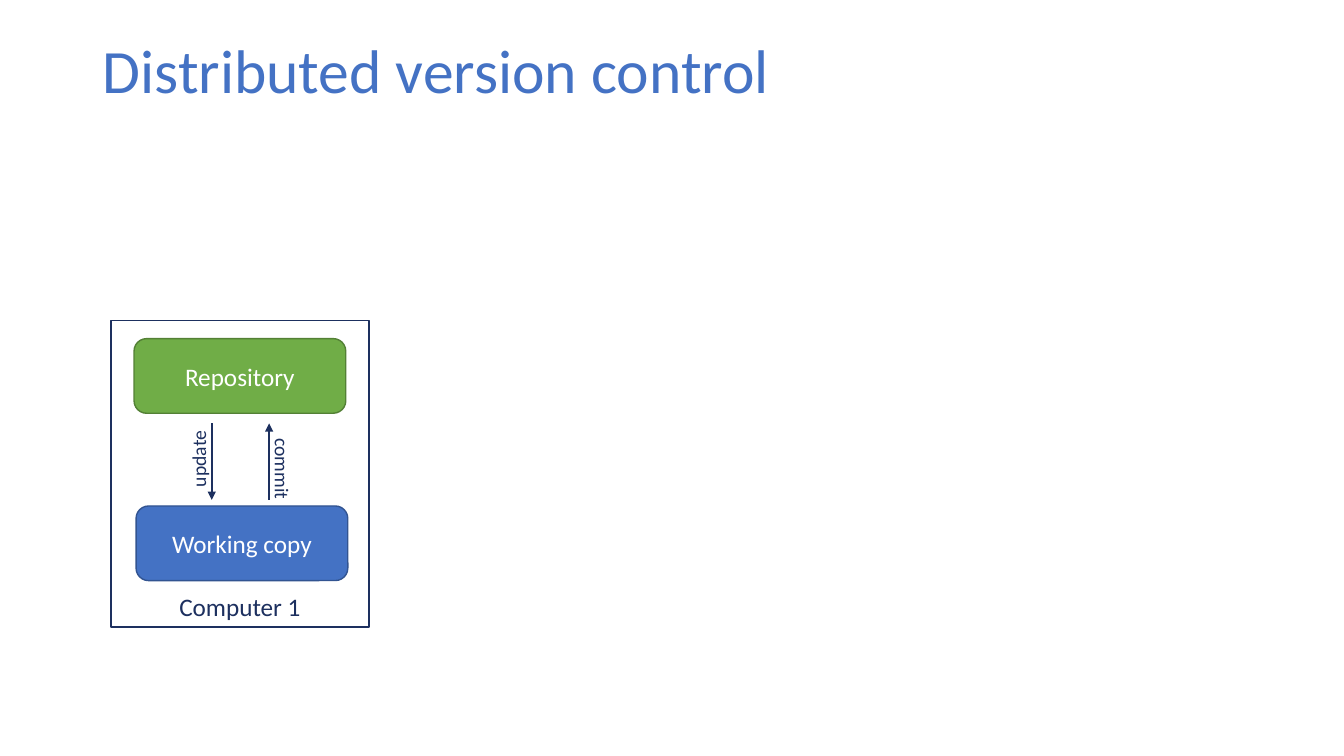
from dataclasses import dataclass

from lxml.etree import SubElement
from pptx import Presentation
from pptx.dml.color import RGBColor
from pptx.enum.shapes import MSO_CONNECTOR, MSO_SHAPE
from pptx.enum.text import MSO_ANCHOR, PP_ALIGN
from pptx.oxml.ns import qn
from pptx.util import Inches, Pt


@dataclass(frozen=True)
class Theme:
    font: str = "Calibri"
    blue: str = "4472C4"
    blue_edge: str = "325491"
    green: str = "70AD47"
    green_edge: str = "538035"
    navy: str = "1D305F"
    white: str = "FFFFFF"
    title_size: int = 44
    body_size: int = 18
    arrow_size: int = 14


THEME = Theme()
SLIDE_SIZE = 13.33, 7.5

TITLE = "Distributed version control"
COMPUTER = "Computer 1"
# name, left and top inside the computer, fill, edge
STORES = [
    ("Working copy", 0.25, 1.84, THEME.blue, THEME.blue_edge),
    ("Repository", 0.23, 0.18, THEME.green, THEME.green_edge),
]
# label, arrow x, points down, label left and top, rotation
TRANSFERS = [
    ("update", 1.0, True, 0.42, 1.13, 270),
    ("commit", 1.57, False, 1.25, 1.35, 90),
]

FRAME_LEFT, FRAME_TOP, FRAME_WIDTH, FRAME_HEIGHT = 1.1, 3.18, 2.56, 3.04
STORE_SIZE = 2.1, 0.74
ARROW_TOP, ARROW_BOTTOM = 1.02, 1.78


def color(value):
    return RGBColor.from_string(value)


def in_frame(left, top):
    """Turn a place inside the computer into a place on the slide."""
    return Inches(FRAME_LEFT + left), Inches(FRAME_TOP + top)


def write(shape, text, size, ink, anchor=MSO_ANCHOR.TOP, align=PP_ALIGN.LEFT, wrap=True):
    frame = shape.text_frame
    frame.text = text
    frame.word_wrap = wrap
    frame.vertical_anchor = anchor
    paragraph = frame.paragraphs[0]
    paragraph.alignment = align
    font = paragraph.runs[0].font
    font.name, font.size = THEME.font, Pt(size)
    font.color.rgb = color(ink)
    return paragraph


def add_box(slide, preset, left, top, width, height, fill, edge):
    shape = slide.shapes.add_shape(preset, *in_frame(left, top), Inches(width), Inches(height))
    shape.shadow.inherit = False
    if fill:
        shape.fill.solid()
        shape.fill.fore_color.rgb = color(fill)
    else:
        shape.fill.background()
    shape.line.color.rgb = color(edge)
    shape.line.width = Pt(1)
    return shape


def add_arrow(slide, x, start, end):
    arrow = slide.shapes.add_connector(
        MSO_CONNECTOR.STRAIGHT, *in_frame(x, start), *in_frame(x, end))
    arrow.line.color.rgb = color(THEME.navy)
    arrow.line.width = Pt(1.5)
    SubElement(arrow.line._get_or_add_ln(), qn("a:tailEnd"), type="triangle")
    SubElement(arrow._element.spPr, qn("a:effectLst"))


def add_computer(slide):
    for name, left, top, fill, edge in STORES:
        store = add_box(slide, MSO_SHAPE.ROUNDED_RECTANGLE, left, top, *STORE_SIZE, fill, edge)
        write(store, name, THEME.body_size, THEME.white, MSO_ANCHOR.MIDDLE, PP_ALIGN.CENTER)

    caption = slide.shapes.add_textbox(*in_frame(0.58, 2.64), Inches(1.42), Inches(0.4))
    write(caption, COMPUTER, THEME.body_size, THEME.navy, wrap=False)
    add_box(slide, MSO_SHAPE.RECTANGLE, 0, 0, FRAME_WIDTH, FRAME_HEIGHT, None, THEME.navy)

    for name, x, down, left, top, rotation in TRANSFERS:
        ends = (ARROW_TOP, ARROW_BOTTOM) if down else (ARROW_BOTTOM, ARROW_TOP)
        add_arrow(slide, x, *ends)
        label = slide.shapes.add_textbox(*in_frame(left, top), Inches(0.9), Inches(0.34))
        label.rotation = rotation
        write(label, name, THEME.arrow_size, THEME.navy)


def main():
    presentation = Presentation()
    presentation.slide_width, presentation.slide_height = map(Inches, SLIDE_SIZE)
    slide = presentation.slides.add_slide(presentation.slide_layouts[6])

    title = slide.shapes.add_textbox(Inches(0.92), 0, Inches(11.5), Inches(1.45))
    paragraph = write(title, TITLE, THEME.title_size, THEME.blue, MSO_ANCHOR.MIDDLE)
    paragraph.line_spacing = 0.9
    add_computer(slide)
    presentation.save("out.pptx")


if __name__ == "__main__":
    main()
